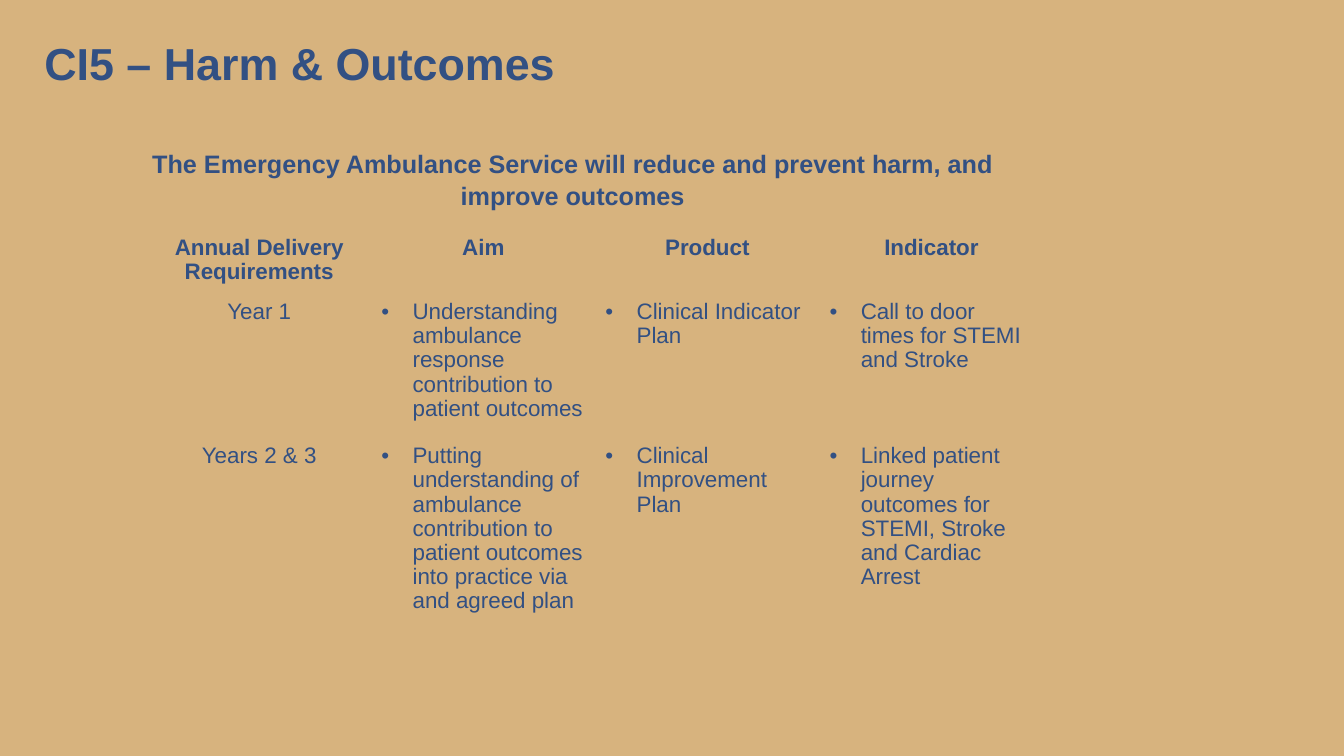
from lxml import etree
from pptx import Presentation, util as u
from pptx.dml.color import RGBColor
from pptx.enum import text
from pptx.oxml.ns import qn

COLORS = {"sand": "D7B37E", "navy": "325083"}
HEADERS = ["Annual Delivery Requirements", "Aim", "Product", "Indicator"]
YEARS = [
    ["Year 1",
     "Understanding ambulance response contribution to patient outcomes",
     "Clinical Indicator Plan",
     "Call to door times for STEMI and Stroke"],
    ["Years 2 & 3",
     "Putting understanding of ambulance contribution to patient outcomes "
     "into practice via and agreed plan",
     "Clinical Improvement Plan",
     "Linked patient journey outcomes for STEMI, Stroke and Cardiac Arrest"],
]
ROW_HEIGHTS = [0.64, 1.43, 2.23]
LEFT, CENTER = text.PP_ALIGN.LEFT, text.PP_ALIGN.CENTER


def rgb(name):
    return RGBColor.from_string(COLORS[name])


def set_values(target, values):
    for name, value in values.items():
        setattr(target, name, value)


class Deck:
    def __init__(self, prs):
        self.s = prs.slides.add_slide(prs.slide_layouts[1])
        fill = self.s.background.fill
        fill.solid()
        fill.fore_color.rgb = rgb("sand")

    def paragraph(self, tf, words, size, bold=False, bullet=None, left=0, hang=0, **layout):
        """Fill a frame with one paragraph; left and hang are its indents in inches."""
        tf.text = words
        p = tf.paragraphs[0]
        pPr = p._p.get_or_add_pPr()
        pPr.set("marL", str(u.Inches(left)))
        pPr.set("indent", str(u.Inches(-hang)))
        if bullet:
            etree.SubElement(pPr, qn("a:buFont")).set("typeface", "Arial")
            etree.SubElement(pPr, qn("a:buChar")).set("char", bullet)
        else:
            etree.SubElement(pPr, qn("a:buNone"))
        set_values(p, {"space_before": u.Pt(0), **layout})
        font = p.runs[0].font
        set_values(font, {"name": "Arial", "size": u.Pt(size), "bold": bold})
        font.color.rgb = rgb("navy")

    def placeholder(self, idx, box, words, size, frame, **layout):
        sp = self.s.placeholders[idx]
        set_values(sp, dict(zip(("left", "top", "width", "height"), map(u.Inches, box))))
        set_values(sp.text_frame, {"word_wrap": True, "auto_size": text.MSO_AUTO_SIZE.NONE, **frame})
        self.paragraph(sp.text_frame, words, size, bold=True, **layout)
        return sp

    def borders(self, cell, bottom):
        tcPr = cell._tc.get_or_add_tcPr()
        for side, width in (("L", 1), ("R", 1), ("T", 1), ("B", bottom)):
            ln = etree.SubElement(tcPr, qn("a:ln" + side), w=str(u.Pt(width)))
            solid = etree.SubElement(ln, qn("a:solidFill"))
            etree.SubElement(solid, qn("a:srgbClr"), val=COLORS["sand"])

    def table(self, box, rows, heights):
        tbl = self.s.shapes.add_table(len(rows), len(rows[0]), *map(u.Inches, box)).table
        set_values(tbl, {"first_row": False, "horz_banding": False})
        for row, height in zip(tbl.rows, heights):
            row.height = u.Inches(height)
        for i, row in enumerate(rows):
            for j, words in enumerate(row):
                cell = tbl.cell(i, j)
                self.borders(cell, bottom=1 if i else 3)
                cell.fill.background()
                if i and j:
                    style = {"bullet": "•", "left": 0.31, "hang": 0.31, "alignment": LEFT}
                else:
                    style = {"alignment": CENTER, "bold": i == 0}
                self.paragraph(cell.text_frame, words, 16, line_spacing=0.97, **style)


def main():
    prs = Presentation()
    set_values(prs, {"slide_width": u.Inches(13.33), "slide_height": u.Inches(7.5)})
    deck = Deck(prs)
    title = deck.placeholder(
        0, (0.34, 0.19, 10.48, 0.8), "CI5 – Harm & Outcomes", 32,
        {"vertical_anchor": text.MSO_ANCHOR.MIDDLE},
        alignment=LEFT, line_spacing=u.Pt(43))
    title.fill.solid()
    title.fill.fore_color.rgb = rgb("sand")
    deck.placeholder(
        1, (-0.11, 1.09, 10.58, 2.22),
        "The Emergency Ambulance Service will reduce and prevent harm, and improve outcomes", 18,
        {"vertical_anchor": text.MSO_ANCHOR.TOP, "margin_top": u.Inches(0.36)},
        left=1, alignment=CENTER, line_spacing=1.07)
    deck.table((1.46, 2.29, 8.89, 4.3), [HEADERS] + YEARS, ROW_HEIGHTS)
    prs.save("out.pptx")


if __name__ == "__main__":
    main()
